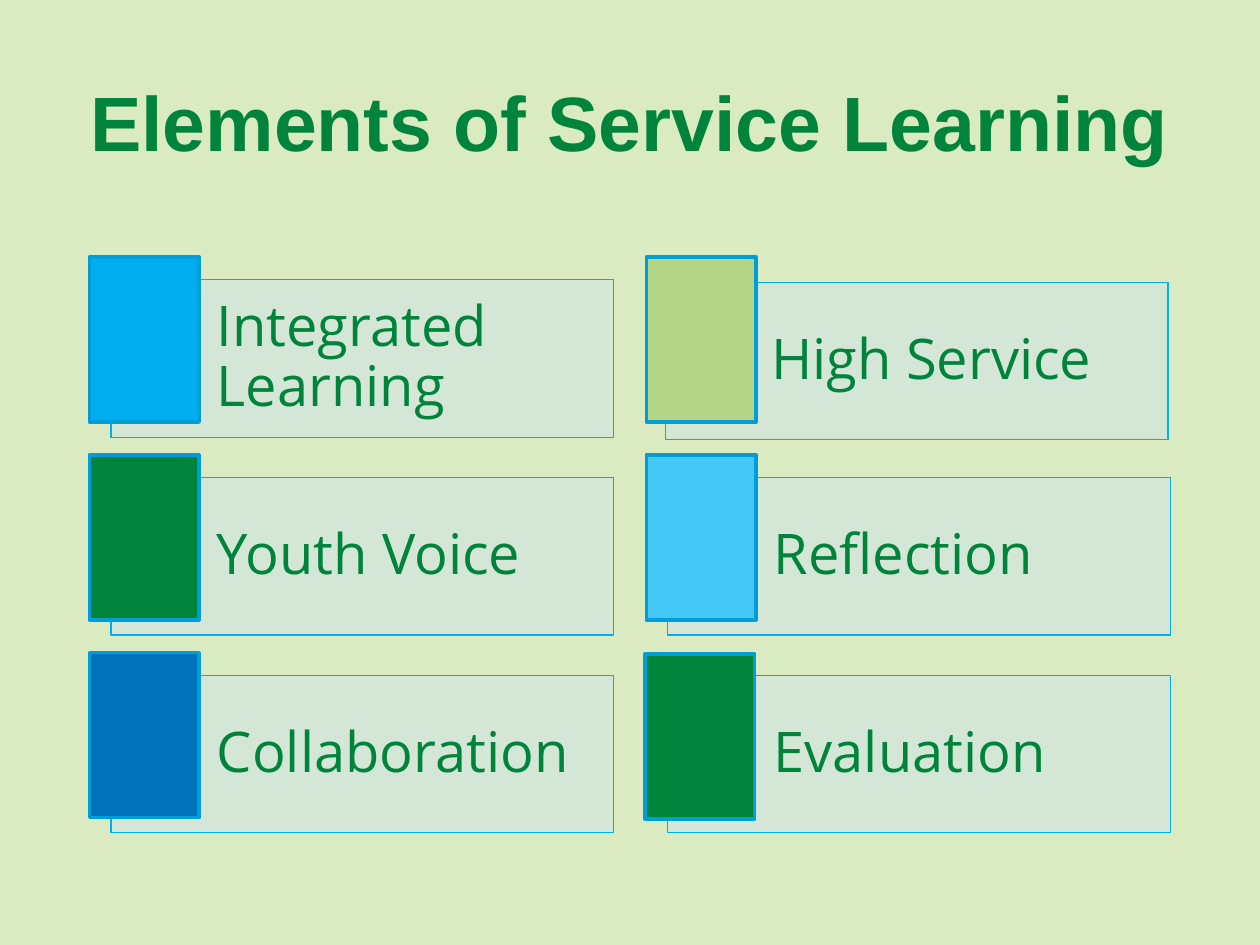
from lxml.etree import SubElement
from pptx import Presentation
from pptx.dml.color import RGBColor
from pptx.enum.shapes import MSO_SHAPE
from pptx.enum.text import MSO_ANCHOR, PP_ALIGN
from pptx.oxml.ns import qn
from pptx.util import Inches, Pt

COLORS = {
    "background": "DAEBC1", "text": "00833B", "panel": "CCE3F9",
    "panel_line": "00AEEF", "tile_line": "009ED9",
    "cyan": "00AEEF", "lime": "B4D486", "green": "00833B",
    "sky": "44C8F5", "blue": "0072BC",
}
ELEMENTS = [
    ("Integrated Learning", "cyan"), ("High Service", "lime"),
    ("Youth Voice", "green"), ("Reflection", "sky"),
    ("Collaboration", "blue"), ("Evaluation", "green"),
]
COLUMNS = 2
GRID_LEFT, GRID_TOP = 0.71, 2.04
COLUMN_PITCH, ROW_PITCH = 4.42, 1.57
CARD_W, CARD_H = 4.16, 1.43
TILE_W, TILE_H = 0.87, 1.31
PANEL_DX, PANEL_DY = 0.17, 0.18
# Small offsets (dx, dy) of single parts from the grid
PANEL_NUDGE = {"High Service": (-0.02, 0.02)}
TILE_NUDGE = {"Evaluation": (-0.01, 0.01)}


def color(name):
    return RGBColor.from_string(COLORS[name])


def write(tf, text, font, size, bold=False, align=PP_ALIGN.LEFT):
    tf.word_wrap = True
    tf.vertical_anchor = MSO_ANCHOR.MIDDLE
    p = tf.paragraphs[0]
    p.text = text
    p.alignment = align
    r = p.runs[0]
    r.font.name, r.font.size, r.font.bold = font, Pt(size), bold
    r.font.color.rgb = color("text")
    return p


def add_box(s, left, top, width, height, fill, line, weight):
    sp = s.shapes.add_shape(MSO_SHAPE.RECTANGLE, Inches(left), Inches(top),
                            Inches(width), Inches(height))
    sp.shadow.inherit = False
    sp.fill.solid()
    sp.fill.fore_color.rgb = color(fill)
    sp.line.color.rgb = color(line)
    sp.line.width = Pt(weight)
    return sp


def add_title(s, left, top, width, height):
    sp = s.shapes.add_textbox(Inches(left), Inches(top), Inches(width), Inches(height))
    write(sp.text_frame, "Elements of Service Learning", "Arial", 44, True, PP_ALIGN.CENTER)


def add_card(s, left, top, width, height, label, tile_color):
    # Translucent panel with the label
    dx, dy = PANEL_NUDGE.get(label, (0, 0))
    panel = add_box(s, left + PANEL_DX + dx, top + PANEL_DY + dy,
                    width - PANEL_DX, height - PANEL_DY, "panel", "panel_line", 0.75)
    fill = panel._element.spPr.find(qn("a:solidFill"))
    SubElement(fill[0], qn("a:alpha"), val="40000")
    tf = panel.text_frame
    tf.margin_left = Inches(0.84)
    tf.margin_top = tf.margin_right = tf.margin_bottom = Inches(0.13)
    write(tf, label, "Open Sans", 32).line_spacing = 0.9

    # Coloured tile over the panel's corner
    dx, dy = TILE_NUDGE.get(label, (0, 0))
    add_box(s, left + dx, top + dy, TILE_W, TILE_H, tile_color, "tile_line", 2)


def add_elements(s, left, top):
    for i, (label, tile_color) in enumerate(ELEMENTS):
        row, column = divmod(i, COLUMNS)
        add_card(s, left + column * COLUMN_PITCH, top + row * ROW_PITCH,
                 CARD_W, CARD_H, label, tile_color)


def main():
    prs = Presentation()
    prs.slide_width, prs.slide_height = Inches(10), Inches(7.5)
    s = prs.slides.add_slide(prs.slide_layouts[6])
    s.background.fill.solid()
    s.background.fill.fore_color.rgb = color("background")
    add_title(s, 0.5, 0.33, 9, 1.25)
    add_elements(s, GRID_LEFT, GRID_TOP)
    prs.save("out.pptx")


if __name__ == "__main__":
    main()
